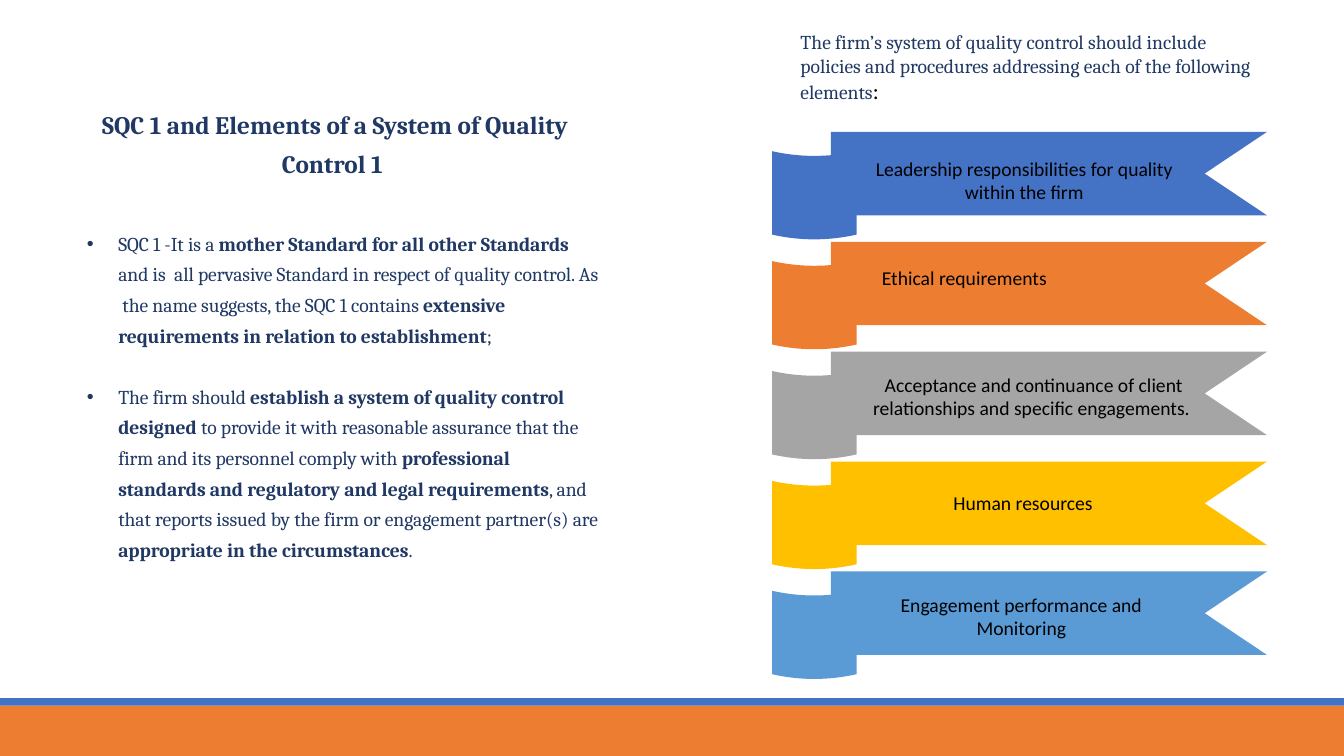
import pptx
import pptx.util
import pptx.dml.color
import pptx.enum.shapes
import pptx.enum.text
import lxml.etree

Pt = pptx.util.Pt
RGBColor = pptx.dml.color.RGBColor
ALIGN = pptx.enum.text.PP_ALIGN
qn = pptx.oxml.ns.qn

NAVY = RGBColor(0x20, 0x38, 0x64)
BLACK = RGBColor(0x00, 0x00, 0x00)
BLUE = RGBColor(0x44, 0x72, 0xC4)
ORANGE = RGBColor(0xED, 0x7D, 0x31)
GREY = RGBColor(0xA5, 0xA5, 0xA5)
GOLD = RGBColor(0xFF, 0xC0, 0x00)
SKY = RGBColor(0x5B, 0x9B, 0xD5)

SLIDE_WIDTH, SLIDE_HEIGHT = 960, 540
RIBBON_PITCH = 78.5

TITLE = "SQC 1 and Elements of a System of Quality Control 1 "
POINTS = [
    [("SQC 1 -It is a ", False),
     ("mother Standard for all other Standards ", True),
     ("and is  all pervasive Standard in respect of quality control. "
      "As  the name suggests, the SQC 1 contains ", False),
     ("extensive  requirements in relation to establishment", True),
     (";", False)],
    [("The firm should ", False),
     ("establish a system of quality control designed ", True),
     ("to provide it with reasonable assurance that the firm and its "
      "personnel comply with ", False),
     ("professional standards and regulatory and legal requirements", True),
     (", and that reports issued by the firm or engagement partner(s) are ", False),
     ("appropriate in the circumstances", True),
     (".", False)],
]
INTRO = ("The firm’s system of quality control should include policies and "
         "procedures addressing each of the following elements")
ELEMENTS = [
    ("Leadership responsibilities for quality within the firm", BLUE,
     (60.2, 14.1, 240, 41), ALIGN.CENTER),
    ("Ethical requirements", ORANGE, (71.3, 13.8, 240, 24), ALIGN.LEFT),
    ("Acceptance and continuance of client relationships and specific engagements. ",
     GREY, (52.5, 11.6, 269, 41), ALIGN.CENTER),
    ("Human resources", GOLD, (44.8, 17.3, 269, 24), ALIGN.CENTER),
    ("Engagement performance and Monitoring", SKY,
     (52.6, 11.6, 251, 41), ALIGN.CENTER),
]


def add_run(paragraph, text, size=14, font="Cambria", color=NAVY, bold=False,
            tracking=0):
    run = paragraph.add_run()
    run.text = text
    run.font.size = Pt(size)
    run.font.name = font
    run.font.color.rgb = color
    run.font.bold = bold
    if tracking:
        run.font._element.set("spc", str(round(tracking * 100)))


def add_frame(slide, box):
    frame = slide.shapes.add_textbox(*map(Pt, box)).text_frame
    frame.word_wrap = True
    return frame


def add_bullet(paragraph, indent):
    properties = paragraph._p.get_or_add_pPr()
    properties.set("marL", str(Pt(indent)))
    properties.set("indent", str(-Pt(indent)))
    for tag, attribute, value in (("a:buFont", "typeface", "Arial"),
                                  ("a:buChar", "char", "•")):
        mark = lxml.etree.SubElement(properties, qn(tag))
        mark.set(attribute, value)


def paint(shape, color):
    shape.shadow.inherit = False
    shape.fill.solid()
    shape.fill.fore_color.rgb = color
    shape.line.fill.background()


def add_outline(slide, corners, color):
    start, *rest = [(Pt(x), Pt(y)) for x, y in corners]
    builder = slide.shapes.build_freeform(*start)
    builder.add_line_segments(rest, close=True)
    outline = builder.convert_to_shape()
    paint(outline, color)
    return outline


def bend(outline, first_segments):
    segments = list(outline._element.iter(qn("a:lnTo")))
    for first in first_segments:
        curve = lxml.etree.Element(qn("a:cubicBezTo"))
        segments[first].addprevious(curve)
        for segment in segments[first:first + 3]:
            curve.append(segment[0])
            segment.getparent().remove(segment)


def add_footer(slide, left, top, width, height):
    stripe = 5.3
    for band_top, band_height, color in ((top + stripe, height - stripe, ORANGE),
                                         (top, stripe, BLUE)):
        band = slide.shapes.add_shape(
            pptx.enum.shapes.MSO_SHAPE.RECTANGLE,
            Pt(left), Pt(band_top), Pt(width), Pt(band_height))
        paint(band, color)


def add_explanation(slide, left, top, width, height):
    heading = add_frame(slide, (left, top, width - 11, 61)).paragraphs[0]
    heading.alignment = ALIGN.CENTER
    heading.line_spacing = 1.3
    add_run(heading, TITLE, size=18, bold=True)

    body = add_frame(slide, (left, top + 89, width, height - 89))
    for index, phrases in enumerate(POINTS):
        point = body.add_paragraph() if index else body.paragraphs[0]
        point.line_spacing = 1.3
        point.space_before = Pt(22 * index)
        add_bullet(point, 22.5)
        for text, bold in phrases:
            add_run(point, text, bold=bold, tracking=-0.05)


def add_ribbon(slide, left, top, width, height, color):
    curl_width, curl_top, sag = 60.3, 13.8, 4.5
    tail_left, notch = left + 42, 44.5
    right, bottom = left + width, top + height

    thirds = [left + curl_width * step / 3 for step in range(4)]
    upper = [(x, top + curl_top + dip)
             for x, dip in zip(thirds, (0, sag, sag, 0))]
    lower = [(x, y + height) for x, y in reversed(upper)]
    curl = add_outline(slide, upper + lower, color)
    bend(curl, (0, 4))
    add_outline(slide, [(right, bottom), (tail_left, bottom), (tail_left, top),
                        (right, top), (right - notch, top + height / 2)], color)


def add_elements(slide, left, top, width, height):
    intro = add_frame(slide, (left + 13.2, top, 340.5, 60.5)).paragraphs[0]
    add_run(intro, INTRO)
    add_run(intro, ":", size=16, font="Calibri", color=BLACK)

    first_ribbon = top + 76.2
    for index, (text, color, label_box, alignment) in enumerate(ELEMENTS):
        ribbon_top = first_ribbon + index * RIBBON_PITCH
        add_ribbon(slide, left, ribbon_top, width, 59.6, color)
        x, y, label_width, label_height = label_box
        label = add_frame(slide, (left + x, ribbon_top + y,
                                  label_width, label_height)).paragraphs[0]
        label.alignment = alignment
        add_run(label, text, font="Calibri", color=BLACK)


def main():
    presentation = pptx.Presentation()
    presentation.slide_width = Pt(SLIDE_WIDTH)
    presentation.slide_height = Pt(SLIDE_HEIGHT)
    slide = presentation.slides.add_slide(presentation.slide_layouts[6])
    add_footer(slide, 0, 498.7, SLIDE_WIDTH, 41.3)
    add_explanation(slide, 54.9, 68, 380, 337)
    add_elements(slide, 551.5, 18, 353.5, 468)
    presentation.save("out.pptx")


if __name__ == "__main__":
    main()
